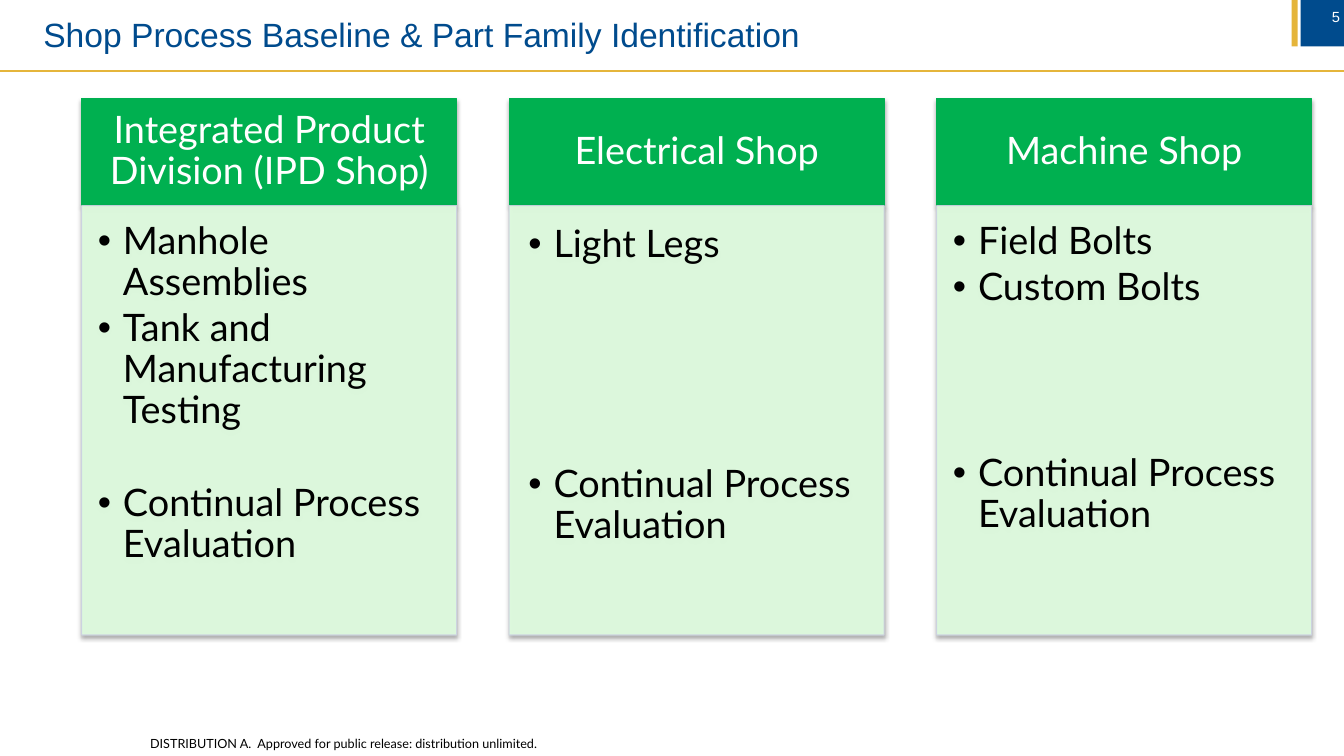
"""Build the shop process baseline slide with three shop columns."""
from lxml import etree
from pptx import Presentation
from pptx import util as u
from pptx.dml.color import RGBColor
from pptx.enum import shapes, text
from pptx.oxml.ns import qn

TITLE = "Shop Process Baseline & Part Family Identification"
PAGE = "5"
RELEASE = "DISTRIBUTION A.  Approved for public release: distribution unlimited."
EVALUATION = "Continual Process Evaluation"
TIGHT, LOOSE = (0.16, 0.16, 0.21, 0.24), (0.19, 0.19, 0.25, 0.28)
SHOPS = [
    {"name": "Integrated Product Division (IPD Shop)", "gap": 33.5, "insets": TIGHT,
     "parts": ["Manhole Assemblies", "Tank and Manufacturing Testing"]},
    {"name": "Electrical Shop", "gap": 138.5, "insets": LOOSE, "parts": ["Light Legs"]},
    {"name": "Machine Shop", "gap": 99.5, "insets": TIGHT,
     "parts": ["Field Bolts", "Custom Bolts"]},
]
THEME = {
    "blue": "004B8D", "gold": "E5B53B", "green": "00B050", "mint": "E1FFE1",
    "edge": "CCD2E2", "white": "FFFFFF", "black": "000000",
    "heading": "Arial", "body": "Lato", "bullet": "Arial",
    "title_size": 24, "shop_size": 27, "page_size": 10.5, "release_size": 9,
}
COLUMN_LEFT, COLUMN_PITCH, COLUMN_WIDTH = 0.81, 4.24, 3.72
HEADER_TOP, HEADER_HEIGHT, PANEL_HEIGHT = 0.98, 1.06, 4.26
INDENT = 0.25


def colour(key):
    return RGBColor.from_string(THEME[key])


def place(shape, box):
    for side, length in zip(("left", "top", "width", "height"), box):
        setattr(shape, side, u.Inches(length))


def paint(shape, fill, edge=None, opacity=100):
    shape.shadow.inherit = False
    shape.fill.solid()
    shape.fill.fore_color.rgb = colour(fill)
    if edge:
        shape.line.color.rgb = colour(edge)
        shape.line.width = u.Pt(0.75)
    else:
        shape.line.fill.background()
    if opacity < 100:
        for tint in shape.element.spPr.iter(qn("a:srgbClr")):
            etree.SubElement(tint, qn("a:alpha"), val=str(opacity * 1000))


def cast_shadow(shape):
    effects = shape.element.spPr.find(qn("a:effectLst"))
    outer = etree.SubElement(effects, qn("a:outerShdw"), blurRad=str(u.Pt(3.1)),
                             dist=str(u.Pt(1.8)), dir="5400000", rotWithShape="0")
    tint = etree.SubElement(outer, qn("a:srgbClr"), val=THEME["black"])
    etree.SubElement(tint, qn("a:alpha"), val="35000")


def frame(shape, anchor, insets=(0.1, 0.05, 0.1, 0.05), wrap=True):
    values = {"auto_size": text.MSO_AUTO_SIZE.NONE, "word_wrap": wrap,
              "vertical_anchor": anchor}
    for side, inset in zip(("left", "top", "right", "bottom"), insets):
        values["margin_" + side] = u.Inches(inset)
    for name, value in values.items():
        setattr(shape.text_frame, name, value)


def write(paragraph, words, face, size, ink, **layout):
    for name, value in layout.items():
        setattr(paragraph, name, value)
    run = paragraph.add_run()
    run.text = words
    looks = {"name": THEME[face], "size": u.Pt(THEME[size]), "bold": False}
    for name, value in looks.items():
        setattr(run.font, name, value)
    run.font.color.rgb = colour(ink)


def add_block(slide, box, fill, edge=None):
    block = slide.shapes.add_shape(shapes.MSO_SHAPE.RECTANGLE, 0, 0, 0, 0)
    place(block, box)
    paint(block, fill, edge)
    return block


def add_label(slide, box, anchor, insets, wrap, words, **style):
    label = slide.shapes.add_textbox(0, 0, 0, 0)
    place(label, box)
    frame(label, anchor, insets, wrap)
    write(label.text_frame.paragraphs[0], words, **style)


def add_shop(slide, column, shop, panel):
    left = COLUMN_LEFT + column * COLUMN_PITCH
    header = add_block(slide, (left, HEADER_TOP, COLUMN_WIDTH, HEADER_HEIGHT),
                       "green", "green")
    cast_shadow(header)
    frame(header, text.MSO_ANCHOR.MIDDLE, (0.21, 0.12, 0.21, 0.12))
    write(header.text_frame.paragraphs[0], shop["name"], "body", "shop_size", "white",
          alignment=text.PP_ALIGN.CENTER, line_spacing=0.9)

    place(panel, (left, HEADER_TOP + HEADER_HEIGHT, COLUMN_WIDTH, PANEL_HEIGHT))
    paint(panel, "mint", "edge", 90)
    cast_shadow(panel)
    header.element.addnext(panel.element)
    frame(panel, text.MSO_ANCHOR.TOP, shop["insets"])
    for row, item in enumerate(shop["parts"] + [EVALUATION]):
        rows = panel.text_frame
        paragraph = rows.add_paragraph() if row else rows.paragraphs[0]
        props = paragraph._p.get_or_add_pPr()
        props.set("marL", str(u.Inches(INDENT)))
        props.set("indent", str(-u.Inches(INDENT)))
        etree.SubElement(props, qn("a:buFont"), typeface=THEME["bullet"])
        etree.SubElement(props, qn("a:buChar"), char="•")
        write(paragraph, item, "body", "shop_size", "black",
              alignment=text.PP_ALIGN.LEFT, line_spacing=0.9, space_after=u.Pt(4),
              space_before=u.Pt(shop["gap"] if item == EVALUATION else 0))


def main():
    deck = Presentation()
    deck.slide_width, deck.slide_height = u.Inches(13.33), u.Inches(7.5)
    slide = deck.slides.add_slide(deck.slide_layouts.get_by_name("Comparison"))
    title, *panels, spare = slide.placeholders
    spare.element.getparent().remove(spare.element)

    add_block(slide, (12.9, 0, 0.43, 0.46), "blue")
    add_block(slide, (12.81, 0, 0.06, 0.46), "gold")
    rule = slide.shapes.add_connector(shapes.MSO_CONNECTOR.STRAIGHT, 0, u.Inches(0.7),
                                      deck.slide_width, u.Inches(0.7))
    rule.line.color.rgb = colour("gold")
    rule.line.width = u.Pt(1.5)
    etree.SubElement(rule.element.spPr, qn("a:effectLst"))
    add_label(slide, (12.95, 0.02, 0.38, 0.3), text.MSO_ANCHOR.MIDDLE,
              (0, 0.05, 0.04, 0.05), True, PAGE, face="heading", size="page_size",
              ink="white", alignment=text.PP_ALIGN.RIGHT)
    add_label(slide, (1.39, 7.25, 4.09, 0.25), text.MSO_ANCHOR.TOP,
              (0.1, 0.05, 0.1, 0.05), False, RELEASE, face="body",
              size="release_size", ink="black")

    place(title, (0.33, 0.09, 9.78, 0.92))
    frame(title, text.MSO_ANCHOR.TOP)
    write(title.text_frame.paragraphs[0], TITLE, "heading", "title_size", "blue",
          alignment=text.PP_ALIGN.LEFT)
    for column, (shop, panel) in enumerate(zip(SHOPS, panels)):
        add_shop(slide, column, shop, panel)
    deck.save("out.pptx")


if __name__ == "__main__":
    main()
